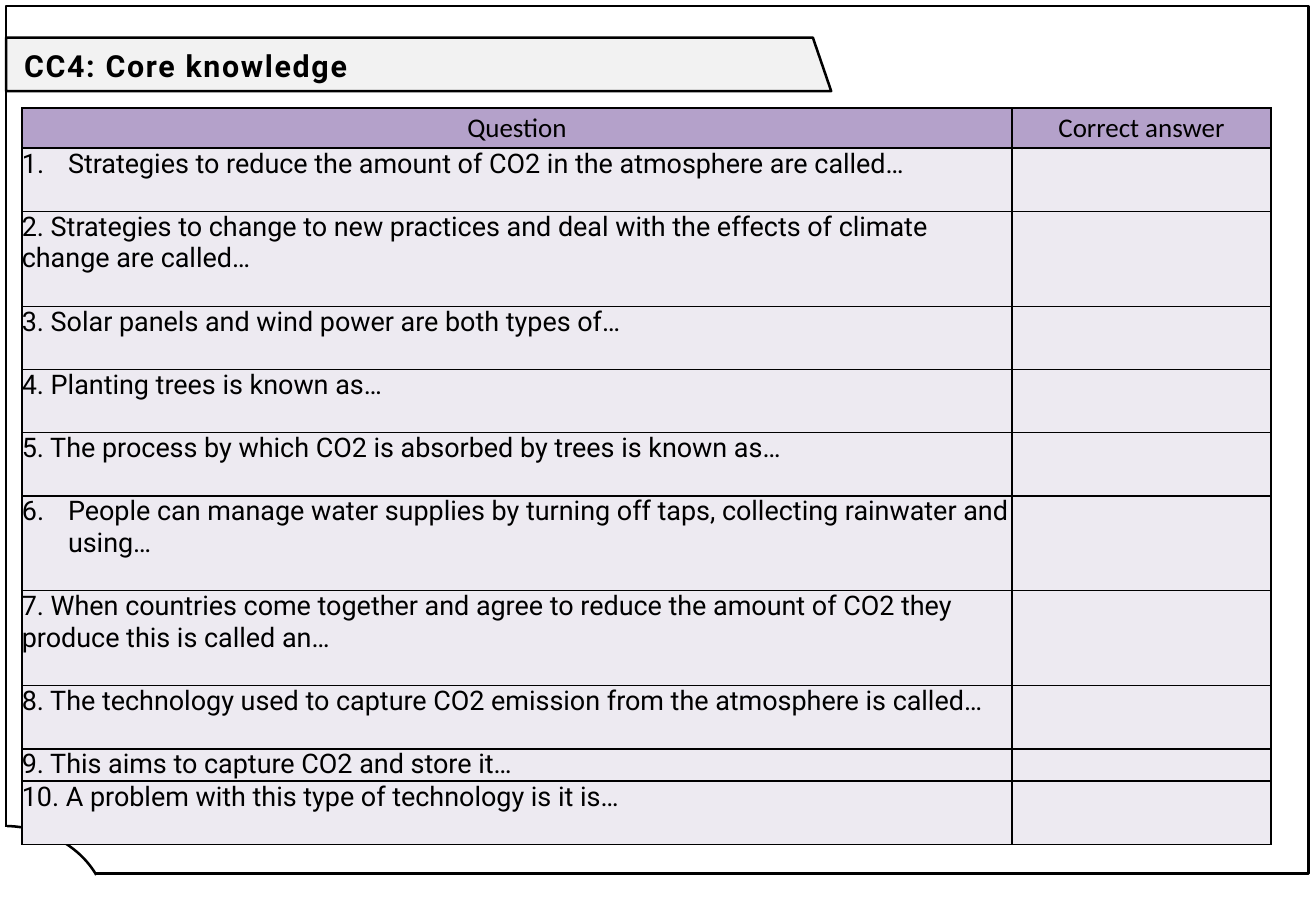
from lxml.etree import SubElement
from pptx import Presentation
from pptx.dml.color import RGBColor
from pptx.enum.shapes import MSO_SHAPE
from pptx.enum.text import MSO_ANCHOR, PP_ALIGN
from pptx.oxml.ns import qn
from pptx.util import Inches, Pt

WIDTH, HEIGHT = Inches(10.83), Inches(7.5)
HEADER_HEIGHT, LINE_HEIGHT = 4.4, 3.47
HEADER_FORMAT = {"name": "Calibri", "size": Pt(16)}
QUESTION_FORMAT = {"name": "Roboto", "size": Pt(16)}
TITLE_FORMAT = {"name": "Roboto", "size": Pt(18), "bold": True}
NO_MARGINS = {"margin_left": 0, "margin_top": 0, "margin_right": 0, "margin_bottom": 0}
HEADERS = ["Question", "Correct answer"]
QUESTIONS = [
    ("Strategies to reduce the amount of CO2 in the atmosphere are called…", 2, 1),
    ("2. Strategies to change to new practices and deal with the effects of climate "
     "change are called…", 3, None),
    ("3. Solar panels and wind power are both types of…", 2, None),
    ("4. Planting trees is known as…", 2, None),
    ("5. The process by which CO2 is absorbed by trees is known as…", 2, None),
    ("People can manage water supplies by turning off taps, collecting rainwater "
     "and using…", 3, 6),
    ("7. When countries come together and agree to reduce the amount of CO2 they "
     "produce this is called an…", 3, None),
    ("8. The technology used to capture CO2 emission from the atmosphere is called…", 2, None),
    ("9. This aims to capture CO2 and store it…", 1, None),
    ("10. A problem with this type of technology is it is…", 2, None),
]


def color(value):
    """Turn a hex string into a colour."""
    return RGBColor.from_string(value)


def across(percent):
    """Length as a percentage of the slide width."""
    return round(WIDTH * percent / 100)


def down(percent):
    """Length as a percentage of the slide height."""
    return round(HEIGHT * percent / 100)


def area(left, top, width, height):
    """Position and size from slide percentages."""
    return across(left), down(top), across(width), down(height)


def apply_format(target, values):
    """Set attributes from a dict of format values."""
    for name, value in values.items():
        setattr(target, name, value)


def style_shape(shape, fill=None, line=None):
    """Set fill and outline, without a shadow."""
    shape.shadow.inherit = False
    if fill:
        shape.fill.solid()
        shape.fill.fore_color.rgb = color(fill)
    else:
        shape.fill.background()
    if line:
        shape.line.color.rgb = color(line)
        shape.line.width = Pt(1.5)
    else:
        shape.line.fill.background()


def add_banner(slide):
    """Draw the slanted title banner."""
    builder = slide.shapes.build_freeform(across(0.46), down(4.13))
    corners = [(61.77, 4.13), (63.16, 10), (0.46, 10)]
    builder.add_line_segments([(across(x), down(y)) for x, y in corners], close=True)
    style_shape(builder.convert_to_shape(), "F2F2F2", "000000")


def add_frame(slide):
    """Draw the page frame with its curved corner."""
    shapes = slide.shapes
    frame = shapes.add_shape(MSO_SHAPE.RECTANGLE, *area(0.46, 0.67, 98.98, 95.2))
    style_shape(frame, line="000000")
    corner = shapes.add_shape(MSO_SHAPE.ARC, *area(-7.57, 90.67, 15.7, 19.33))
    corner.adjustments[0], corner.adjustments[1] = 162.53, 202.27
    style_shape(corner, "FFFFFF", "000000")
    edge = shapes.add_shape(MSO_SHAPE.RECTANGLE, *area(0.09, 90.8, 0.46, 1.33))
    style_shape(edge, "FFFFFF")


def add_text(paragraph, text, values):
    """Add a black run of text with the given format."""
    run = paragraph.add_run()
    run.text = text
    apply_format(run.font, values)
    run.font.color.rgb = color("000000")
    return run


def add_title(slide, text):
    """Add the letter-spaced title."""
    frame = slide.shapes.add_textbox(*area(0.92, 2.8, 59.37, 8.4)).text_frame
    apply_format(frame, {"word_wrap": True, "vertical_anchor": MSO_ANCHOR.MIDDLE})
    paragraph = frame.paragraphs[0]
    apply_format(paragraph, {"line_spacing": 1.07, "space_after": Pt(8)})
    run = add_text(paragraph, text, TITLE_FORMAT)
    run.font._element.set("spc", "100")


def number_paragraph(paragraph, start):
    """Give a paragraph a hanging automatic number."""
    properties = paragraph._p.get_or_add_pPr()
    indent = Inches(0.38)
    properties.set("marL", str(indent))
    properties.set("indent", str(-indent))
    SubElement(properties, qn("a:buFont"), typeface="+mj-lt")
    SubElement(properties, qn("a:buAutoNum"), type="arabicPeriod", startAt=str(start))


def style_cell(cell, fill):
    """Set margins, black borders and fill of a cell."""
    apply_format(cell, NO_MARGINS)
    properties = cell._tc.get_or_add_tcPr()
    for side in ("lnL", "lnR", "lnT", "lnB"):
        border = SubElement(properties, qn(f"a:{side}"), w=str(Pt(1)))
        SubElement(SubElement(border, qn("a:solidFill")), qn("a:srgbClr"), val="000000")
    cell.fill.solid()
    cell.fill.fore_color.rgb = color(fill)


def add_question_table(slide):
    """Add the table of questions with empty answer cells."""
    heights = [HEADER_HEIGHT] + [LINE_HEIGHT * lines for _, lines, _ in QUESTIONS]
    widths = [75.25, 19.67]
    table = slide.shapes.add_table(
        len(heights), len(widths), *area(1.66, 11.87, sum(widths), sum(heights))).table
    apply_format(table, {"first_row": False, "horz_banding": False})
    for column, width in zip(table.columns, widths):
        column.width = across(width)
    for row, height in zip(table.rows, heights):
        row.height = down(height)
    for column, text in enumerate(HEADERS):
        cell = table.cell(0, column)
        style_cell(cell, "B4A1CA")
        cell.vertical_anchor = MSO_ANCHOR.MIDDLE
        paragraph = cell.text_frame.paragraphs[0]
        paragraph.alignment = PP_ALIGN.CENTER
        add_text(paragraph, text, HEADER_FORMAT)
    for row, (text, _, start) in enumerate(QUESTIONS, 1):
        question, answer = table.cell(row, 0), table.cell(row, 1)
        style_cell(question, "EDEAF1")
        style_cell(answer, "EDEAF1")
        paragraph = question.text_frame.paragraphs[0]
        if start:
            number_paragraph(paragraph, start)
        add_text(paragraph, text, QUESTION_FORMAT)
        SubElement(answer.text_frame.paragraphs[0]._p, qn("a:endParaRPr"), sz="1200")


def main():
    """Build and save the slide."""
    presentation = Presentation()
    apply_format(presentation, {"slide_width": WIDTH, "slide_height": HEIGHT})
    slide = presentation.slides.add_slide(presentation.slide_layouts[6])
    add_banner(slide)
    add_frame(slide)
    add_title(slide, "CC4: Core knowledge")
    add_question_table(slide)
    presentation.save("out.pptx")


if __name__ == "__main__":
    main()
